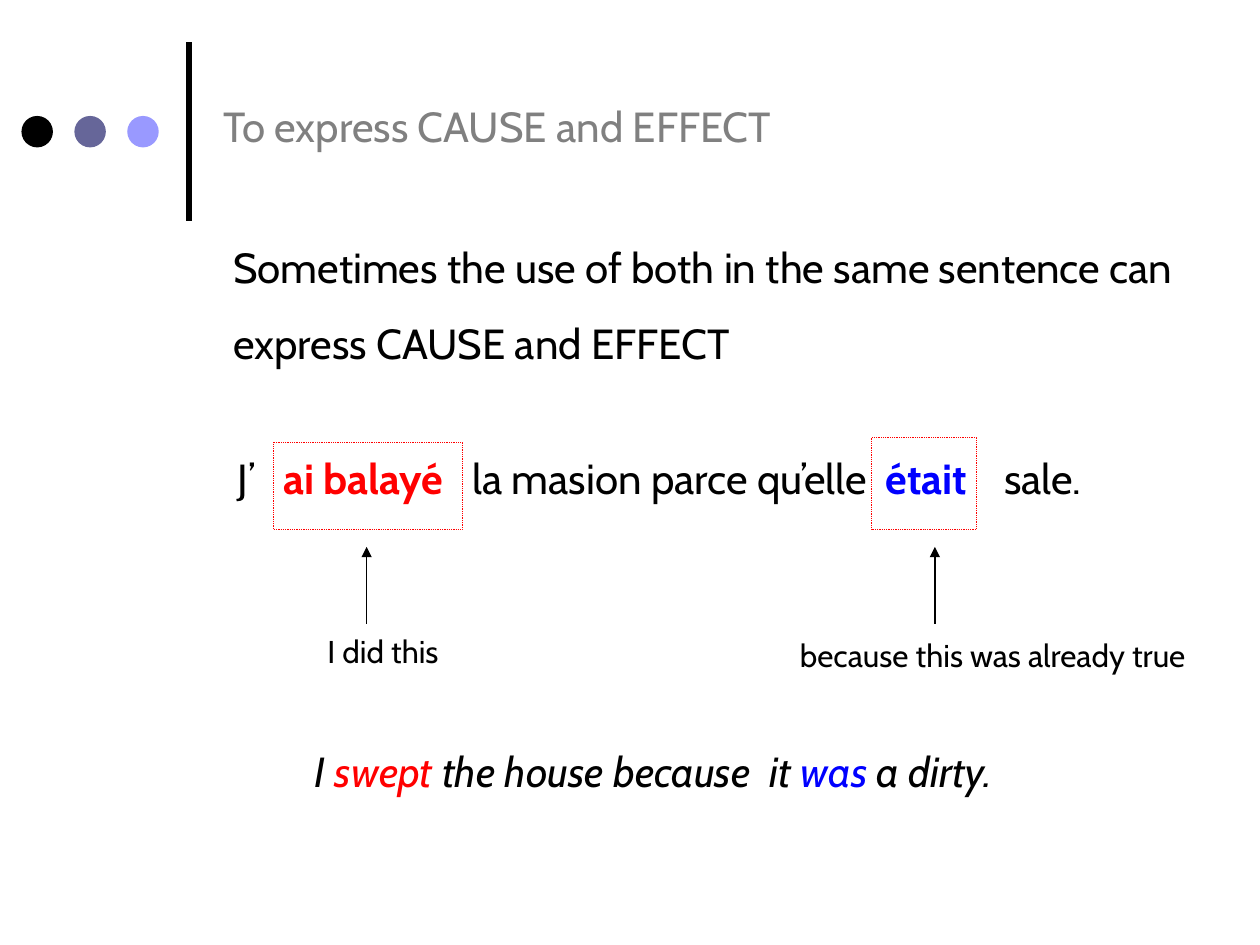
from lxml.etree import SubElement
from pptx import Presentation
from pptx.dml.color import RGBColor
from pptx.enum.dml import MSO_LINE_DASH_STYLE as DASH
from pptx.enum.shapes import MSO_CONNECTOR as CONN, MSO_SHAPE as SHAPE
from pptx.enum.text import MSO_ANCHOR as ANCHOR, MSO_AUTO_SIZE as AUTO, PP_ALIGN as ALIGN
from pptx.oxml.ns import qn
from pptx.util import Inches, Pt

FONT = "Cabin"
COLORS = {
    "black": "000000",
    "gray": "808080",
    "slate": "666699",
    "lilac": "9999FF",
    "red": "FF0000",
    "blue": "0000FF",
}


def rgb(name):
    return RGBColor.from_string(COLORS[name])


def fill_text(sp, runs, size=24, italic=False, before=0, spacing=1.0):
    tf = sp.text_frame
    tf.word_wrap = True
    tf.auto_size = AUTO.NONE
    tf.vertical_anchor = ANCHOR.TOP
    p = tf.paragraphs[0]
    p.alignment = ALIGN.LEFT
    p.space_before = Pt(before)
    p.line_spacing = spacing
    for text, color, bold in runs:
        r = p.add_run()
        r.text = text
        r.font.name = FONT
        r.font.size = Pt(size)
        r.font.bold = bold
        r.font.italic = italic
        r.font.color.rgb = rgb(color)
    return p


def place(sp, left, top, width, height):
    sp.left, sp.top = Inches(left), Inches(top)
    sp.width, sp.height = Inches(width), Inches(height)


def add_text(s, box, runs, **style):
    sp = s.shapes.add_textbox(*map(Inches, box))
    return fill_text(sp, runs, **style)


def remove_bullet(p):
    pPr = p._p.get_or_add_pPr()
    pPr.set("marL", "0")
    pPr.set("indent", "0")
    SubElement(pPr, qn("a:buNone"))


def set_tabs(p, stops):
    tabs = SubElement(p._p.get_or_add_pPr(), qn("a:tabLst"))
    for stop in stops:
        SubElement(tabs, qn("a:tab"), pos=str(Inches(stop)), algn="l")


def add_dot(s, left, color):
    sp = s.shapes.add_shape(SHAPE.OVAL, Inches(left), Inches(0.92), Inches(0.25), Inches(0.25))
    sp.shadow.inherit = False
    sp.fill.solid()
    sp.fill.fore_color.rgb = rgb(color)
    sp.line.fill.background()


def add_frame(s, *box):
    sp = s.shapes.add_shape(SHAPE.RECTANGLE, *map(Inches, box))
    sp.shadow.inherit = False
    sp.fill.background()
    sp.line.color.rgb = rgb("red")
    sp.line.width = Pt(0.5)
    sp.line.dash_style = DASH.ROUND_DOT


def add_vertical(s, x, start, end, width, arrow=False):
    cxn = s.shapes.add_connector(CONN.STRAIGHT, Inches(x), Inches(start), Inches(x), Inches(end))
    cxn.line.color.rgb = rgb("black")
    cxn.line.width = Pt(width)
    if arrow:
        SubElement(cxn.line._get_or_add_ln(), qn("a:tailEnd"), type="triangle")
    SubElement(cxn._element.spPr, qn("a:effectLst"))


def main():
    prs = Presentation()
    prs.slide_width, prs.slide_height = Inches(10), Inches(7.5)
    s = prs.slides.add_slide(prs.slide_layouts[1])

    add_vertical(s, 1.5, 1.75, 0.33, 3)
    for i, color in enumerate(("black", "slate", "lilac")):
        add_dot(s, 0.17 + 0.42 * i, color)

    title, body = s.shapes.title, s.placeholders[1]
    place(title, 1.67, 0.75, 8, 0.5)
    fill_text(title, [("To express CAUSE and EFFECT", "gray", False)])
    place(body, 1.75, 1.67, 7.92, 1.25)
    intro = "Sometimes the use of both in the same sentence can express CAUSE and EFFECT"
    remove_bullet(fill_text(body, [(intro, "black", False)], before=6, spacing=1.5))

    french = add_text(s, (1.79, 3.54, 7.92, 0.5), [
        ("J’\t", "black", False),
        ("ai balayé\t", "red", True),
        ("la masion parce qu’elle\t", "black", False),
        ("était\t", "blue", True),
        ("sale.", "black", False),
    ], before=6)
    set_tabs(french, (0.36, 1.86, 5.14, 6.08))

    add_text(s, (2.4, 5.87, 7.33, 0.5), [
        ("I ", "black", False),
        ("swept ", "red", False),
        ("the house because  it ", "black", False),
        ("was ", "blue", False),
        ("a dirty.", "black", False),
    ], italic=True)

    add_frame(s, 2.17, 3.51, 1.5, 0.69)
    add_frame(s, 6.92, 3.47, 0.83, 0.73)
    for x, box, note in (
        (2.91, (2.5, 4.97, 2.17, 0.4), "I did this"),
        (7.42, (6.25, 5, 3.42, 0.4), "because this was already true"),
    ):
        add_vertical(s, x, 4.95, 4.34, 0.75, arrow=True)
        add_text(s, box, [(note, "black", False)], size=18)

    prs.save("out.pptx")


if __name__ == "__main__":
    main()
